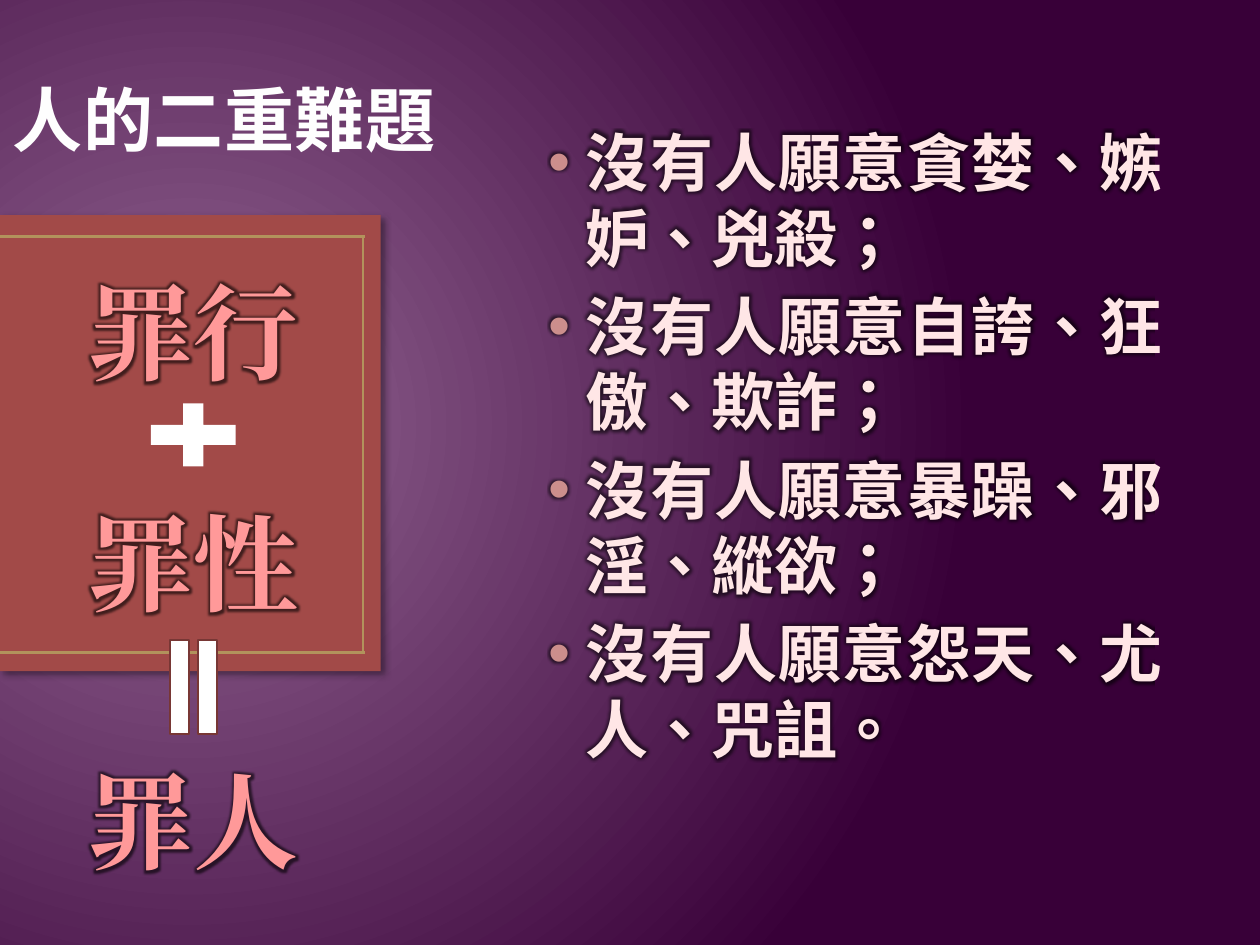
from dataclasses import dataclass

from lxml.etree import SubElement
from pptx import Presentation
from pptx.dml.color import RGBColor
from pptx.enum.dml import MSO_FILL
from pptx.enum.shapes import MSO_CONNECTOR, MSO_SHAPE
from pptx.enum.text import MSO_ANCHOR, MSO_AUTO_SIZE, PP_ALIGN
from pptx.oxml.ns import qn
from pptx.util import Pt


@dataclass(frozen=True)
class Theme:
    glow_centre: str = "946894"
    backdrop: str = "380038"
    panel: str = "A24A48"
    gold: str = "B2935C"
    title: str = "FEFEFE"
    body: str = "FFE6E6"
    bullet: str = "CC8E8C"
    label: str = "FF9999"
    sign: str = "FFFFFF"
    sign_edge: str = "783735"
    dark: str = "000000"
    text_font: str = "Cabin"
    label_font: str = "Times New Roman"
    title_size: int = 40
    body_size: int = 36
    label_size: int = 60


THEME = Theme()
TITLE = "人的二重難題"
POINTS = [
    "沒有人願意貪婪、嫉妒、兇殺；",
    "沒有人願意自誇、狂傲、欺詐；",
    "沒有人願意暴躁、邪淫、縱欲；",
    "沒有人願意怨天、尤人、咒詛。",
]
LABELS = [("罪行", 156), ("罪性", 288), ("罪人", 435.5)]


def rgb(value):
    return RGBColor.from_string(value)


def add_node(parent, tag, **attributes):
    node = SubElement(parent, qn(tag))
    for key, value in attributes.items():
        node.set(key, str(value))
    return node


def add_dark_effect(effects, tag, alpha, **attributes):
    effect = add_node(effects, tag, **attributes)
    colour = add_node(effect, "a:srgbClr", val=THEME.dark)
    add_node(colour, "a:alpha", val=alpha * 1000)


def place(shape, left, top, width, height):
    shape.left, shape.top = Pt(left), Pt(top)
    shape.width, shape.height = Pt(width), Pt(height)


def add_run(paragraph, text, size, colour, font, halo=False):
    run = paragraph.add_run()
    run.text = text
    run.font.size = Pt(size)
    run.font.bold = True
    run.font.color.rgb = rgb(colour)
    properties = run._r.get_or_add_rPr()
    properties.set("lang", "zh-TW")
    if halo:
        effects = add_node(properties, "a:effectLst")
        add_dark_effect(effects, "a:glow", 60, rad=Pt(5))
    run.font.name = font
    add_node(properties, "a:ea", typeface=font)
    return run


def paint_background(slide):
    fill = slide.background.fill
    fill.gradient()
    for stop, colour in zip(fill.gradient_stops, (THEME.glow_centre, THEME.backdrop)):
        stop.color.rgb = rgb(colour)
    gradient = slide.element.find(".//" + qn("a:gradFill"))
    gradient.remove(gradient.find(qn("a:lin")))
    circle = add_node(gradient, "a:path", path="circle")
    add_node(circle, "a:fillToRect", l=15000, t=50000, r=85000, b=60000)


def add_plain_shape(slide, preset, box, fill=None, edge=None):
    shape = slide.shapes.add_shape(preset, *map(Pt, box))
    shape.shadow.inherit = False
    if fill:
        shape.fill.solid()
        shape.fill.fore_color.rgb = rgb(fill)
    else:
        shape.fill.background()
    if edge:
        shape.line.color.rgb = rgb(edge)
        shape.line.width = Pt(1.25)
    else:
        shape.line.fill.background()
    return shape


def add_panel(slide):
    panel = add_plain_shape(slide, MSO_SHAPE.RECTANGLE, (0, 123, 217.5, 260.5), THEME.panel)
    effects = panel._element.spPr.find(qn("a:effectLst"))
    add_dark_effect(effects, "a:outerShdw", 40, blurRad=Pt(4), dist=Pt(3),
                    dir=45 * 60000, algn="tl", rotWithShape=0)


def add_gold_line(slide, *ends):
    rule = slide.shapes.add_connector(MSO_CONNECTOR.STRAIGHT, *map(Pt, ends))
    rule.line.color.rgb = rgb(THEME.gold)
    rule.line.width = Pt(1.5)
    add_node(rule._element.spPr, "a:effectLst")


def fill_title(slide):
    title = slide.shapes.title
    place(title, 0, 38, 271.5, 57.5)
    frame = title.text_frame
    frame.auto_size = MSO_AUTO_SIZE.NONE
    frame.vertical_anchor = MSO_ANCHOR.BOTTOM
    paragraph = frame.paragraphs[0]
    paragraph.alignment = PP_ALIGN.LEFT
    run = add_run(paragraph, TITLE, THEME.title_size, THEME.title, THEME.text_font)
    run._r.get_or_add_rPr().set("spc", "40")


def fill_points(slide):
    body = slide.placeholders[1]
    place(body, 306, 67, 366, 402)
    frame = body.text_frame
    frame.auto_size = MSO_AUTO_SIZE.NONE
    for index, point in enumerate(POINTS):
        paragraph = frame.add_paragraph() if index else frame.paragraphs[0]
        paragraph.alignment = PP_ALIGN.JUSTIFY
        paragraph.space_before = Pt(THEME.body_size * 0.2)
        properties = paragraph._p.get_or_add_pPr()
        properties.set("marL", str(Pt(21.6)))
        properties.set("indent", str(-Pt(21.6)))
        colour = add_node(properties, "a:buClr")
        add_node(colour, "a:srgbClr", val=THEME.bullet)
        add_node(properties, "a:buFont", typeface="Arial")
        add_node(properties, "a:buChar", char="•")
        add_run(paragraph, point, THEME.body_size, THEME.body, THEME.text_font, halo=True)


def add_label(slide, text, top):
    label = add_plain_shape(slide, MSO_SHAPE.ROUNDED_RECTANGLE, (36, top, 149, 66))
    frame = label.text_frame
    frame.word_wrap = False
    frame.vertical_anchor = MSO_ANCHOR.MIDDLE
    paragraph = frame.paragraphs[0]
    paragraph.alignment = PP_ALIGN.CENTER
    add_run(paragraph, text, THEME.label_size, THEME.label, THEME.label_font, halo=True)


def main():
    deck = Presentation()
    deck.slide_width, deck.slide_height = Pt(720), Pt(540)
    slide = deck.slides.add_slide(deck.slide_layouts[1])
    paint_background(slide)

    # Red panel with its gold border
    add_panel(slide)
    add_gold_line(slide, 207.5, 134.5, 207.5, 372.5)
    for height in (135, 373):
        add_gold_line(slide, 0, height, 208.5, height)

    # Title and list
    fill_title(slide)
    fill_points(slide)

    # Equation: deeds plus nature equals sinner
    for text, top in LABELS:
        add_label(slide, text, top)
    add_plain_shape(slide, MSO_SHAPE.MATH_PLUS, (77.5, 224, 66, 49), THEME.sign)
    equals = add_plain_shape(slide, MSO_SHAPE.MATH_EQUAL, (74, 370, 73, 45.5),
                             THEME.sign, THEME.sign_edge)
    equals.rotation = 90

    deck.save("out.pptx")


if __name__ == "__main__":
    main()
